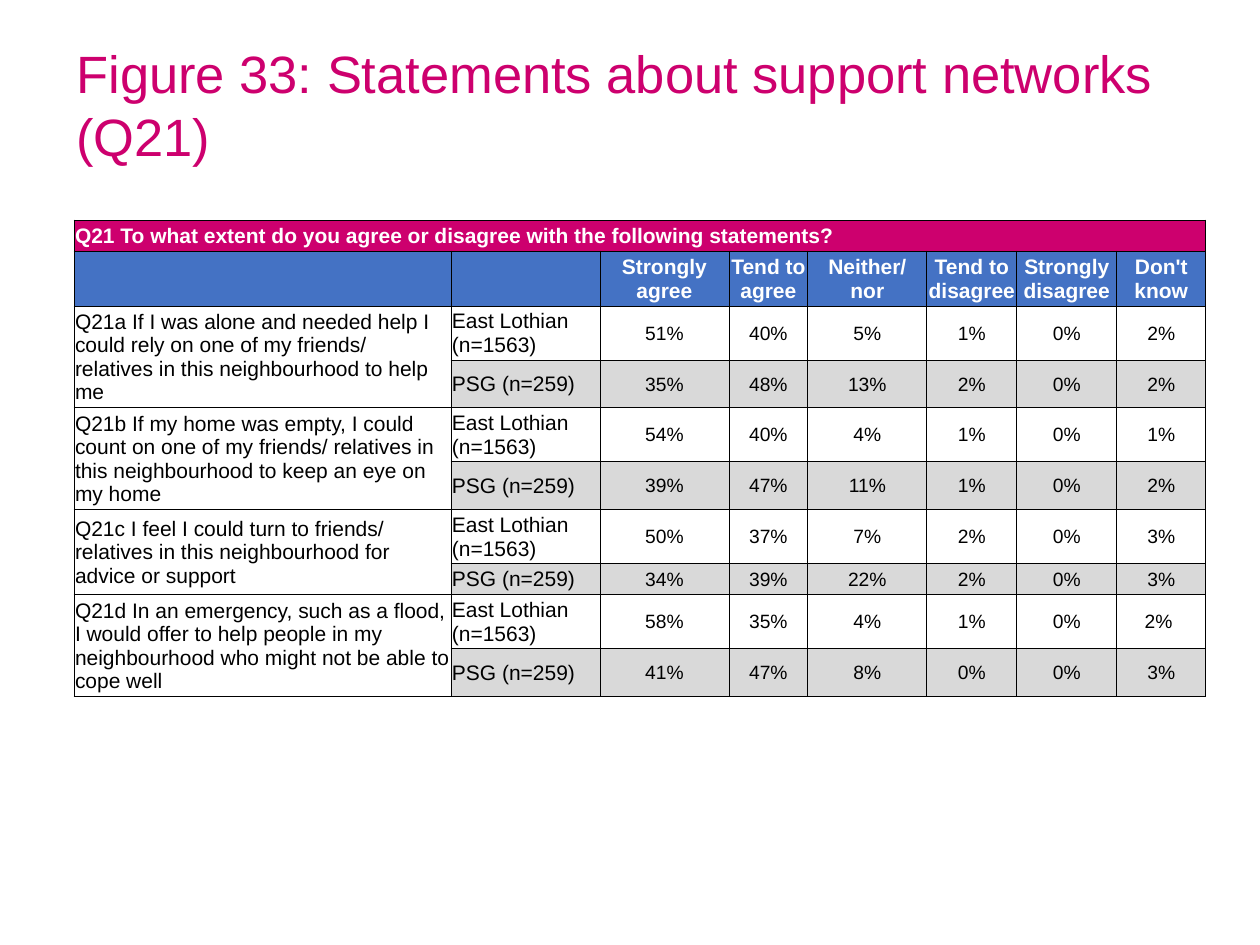
import pptx
import pptx.dml.color
import pptx.enum.text
import pptx.oxml
import pptx.oxml.ns
import pptx.util

PX = 914400 // 126 + 1 / 7
COLORS = {
    "magenta": "CD006E",
    "blue": "4472C4",
    "grey": "D9D9D9",
    "white": "FFFFFF",
    "black": "000000",
}
TITLE = "Figure 33: Statements about support networks (Q21)"
QUESTION = "Q21 To what extent do you agree or disagree with the following statements?"
ANSWERS = ["Strongly agree", "Tend to agree", "Neither/ nor",
           "Tend to disagree", "Strongly disagree", "Don't know"]
GROUPS = [("East Lothian (n=1563)", None), ("PSG (n=259)", "grey")]
STATEMENTS = [
    ("Q21a If I was alone and needed help I could rely on one of my friends/ "
     "relatives in this neighbourhood to help me",
     [["51%", "40%", "5%", "1%", "0%", "2%"],
      ["35%", "48%", "13%", "2%", "0%", "2%"]]),
    ("Q21b If my home was empty, I could count on one of my friends/ "
     "relatives in this neighbourhood to keep an eye on my home",
     [["54%", "40%", "4%", "1%", "0%", "1%"],
      ["39%", "47%", "11%", "1%", "0%", "2%"]]),
    ("Q21c I feel I could turn to friends/ relatives in this neighbourhood "
     "for advice or support",
     [["50%", "37%", "7%", "2%", "0%", "3%"],
      ["34%", "39%", "22%", "2%", "0%", "3%"]]),
    ("Q21d In an emergency, such as a flood, I would offer to help people in "
     "my neighbourhood who might not be able to cope well",
     [["58%", "35%", "4%", "1%", "0%", "2% "],
      ["41%", "47%", "8%", "0%", "0%", "3%"]]),
]
COLUMN_WIDTHS = [377, 149, 129, 79, 119, 90, 100, 89]
ROW_HEIGHTS = [31, 55, 54, 41, 54, 41, 54, 31, 54, 41]


def px(length):
    return pptx.util.Emu(round(length * PX))


def rgb(color):
    return pptx.dml.color.RGBColor.from_string(COLORS[color])


def write(frame, text, size=12, color="black", bold=False, centred=False, spacing=None):
    align = pptx.enum.text.PP_ALIGN
    paragraph = frame.paragraphs[0]
    paragraph.alignment = align.CENTER if centred else align.LEFT
    if spacing:
        paragraph.line_spacing = pptx.util.Pt(spacing)
    run = paragraph.add_run()
    run.text = text
    run.font.name = "Arial"
    run.font.size = pptx.util.Pt(size)
    run.font.bold = bold
    run.font.color.rgb = rgb(color)


def add_borders(cell):
    properties = cell._tc.get_or_add_tcPr()
    for position, side in enumerate(["lnL", "lnR", "lnT", "lnB"]):
        properties.insert(position, pptx.oxml.parse_xml(
            f'<a:{side} {pptx.oxml.ns.nsdecls("a")} w="6350"><a:solidFill>'
            f'<a:srgbClr val="{COLORS["black"]}"/></a:solidFill></a:{side}>'))


def fill_cell(cell, text="", fill=None, **text_format):
    if fill:
        cell.fill.solid()
        cell.fill.fore_color.rgb = rgb(fill)
    else:
        cell.fill.background()
    cell.vertical_anchor = pptx.enum.text.MSO_ANCHOR.MIDDLE
    cell.margin_left = cell.margin_right = cell.margin_top = px(1)
    cell.margin_bottom = 0
    if text:
        write(cell.text_frame, text, **text_format)


def add_title(slide, left, top, width, height):
    box = slide.shapes.add_textbox(px(left), px(top), px(width), px(height))
    frame = box.text_frame
    frame.word_wrap = True
    frame.vertical_anchor = pptx.enum.text.MSO_ANCHOR.MIDDLE
    write(frame, TITLE, size=30, color="magenta", spacing=36)


def add_answer_table(slide, left, top):
    """Two heading rows, then one row per group under each statement."""
    table = slide.shapes.add_table(
        len(ROW_HEIGHTS), len(COLUMN_WIDTHS), px(left), px(top),
        px(sum(COLUMN_WIDTHS)), px(sum(ROW_HEIGHTS))).table
    table.first_row = table.horz_banding = False
    for column, width in zip(table.columns, COLUMN_WIDTHS):
        column.width = px(width)
    for row, height in zip(table.rows, ROW_HEIGHTS):
        row.height = px(height)

    table.cell(0, 0).merge(table.cell(0, len(COLUMN_WIDTHS) - 1))
    fill_cell(table.cell(0, 0), QUESTION, "magenta", color="white", bold=True)
    for column, heading in enumerate(["", ""] + ANSWERS):
        fill_cell(table.cell(1, column), heading, "blue",
                  color="white", bold=True, centred=True)

    for index, (statement, results) in enumerate(STATEMENTS):
        first = 2 + index * len(GROUPS)
        table.cell(first, 0).merge(table.cell(first + len(GROUPS) - 1, 0))
        fill_cell(table.cell(first, 0), statement, "white")
        for row, ((group, shade), shares) in enumerate(zip(GROUPS, results), first):
            fill_cell(table.cell(row, 1), group, shade)
            for column, share in enumerate(shares, 2):
                fill_cell(table.cell(row, column), share, shade or "white",
                          size=11, centred=True)

    for cell in table.iter_cells():
        add_borders(cell)


def main():
    deck = pptx.Presentation()
    deck.slide_width, deck.slide_height = px(1260), px(945)
    slide = deck.slides.add_slide(deck.slide_layouts[6])
    add_title(slide, 64, 26, 1134, 156)
    add_answer_table(slide, 74, 220)
    deck.save("out.pptx")


if __name__ == "__main__":
    main()
